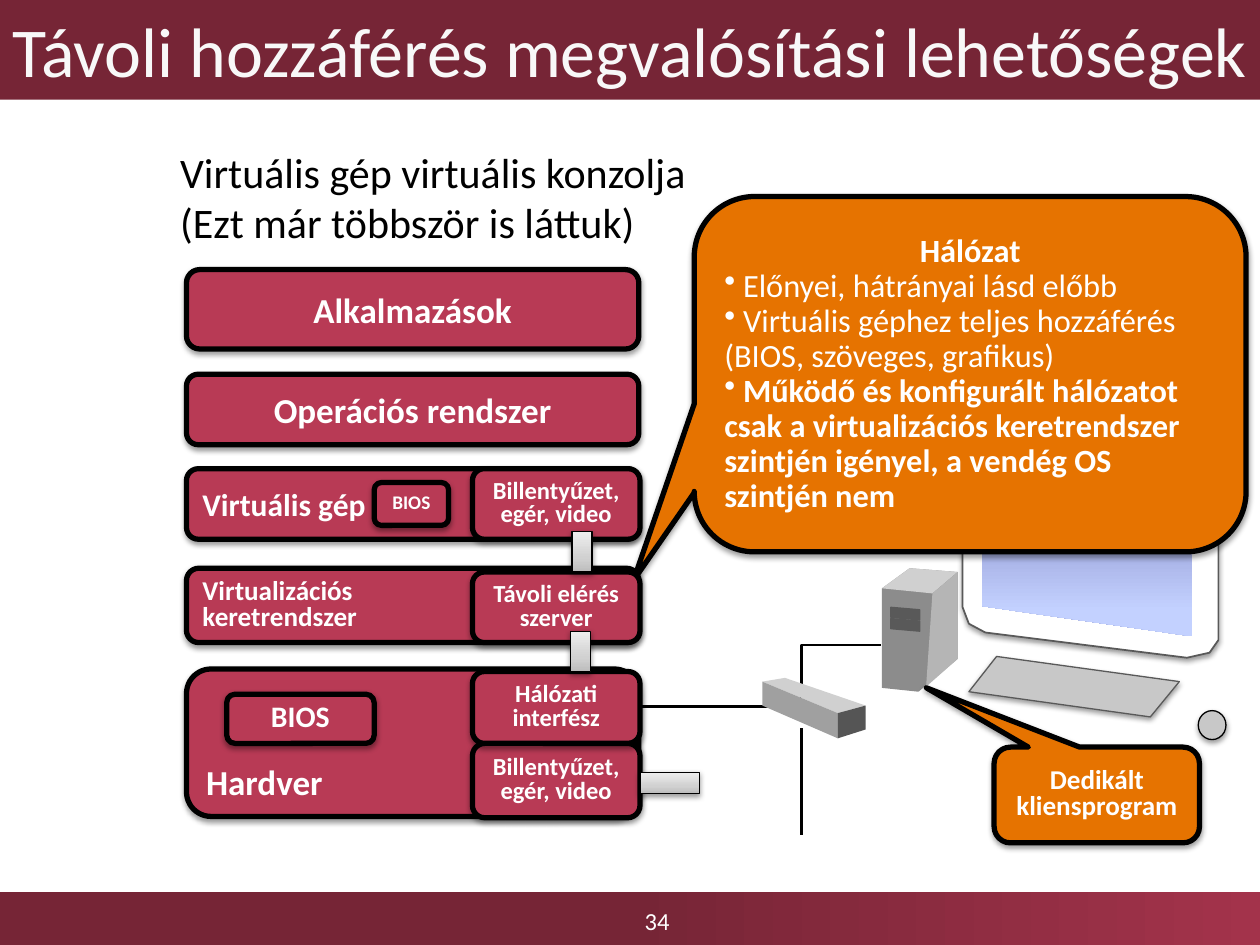
"""Build the slide on remote access to a virtual machine's console."""
from lxml import etree
from pptx import Presentation
from pptx import util as u
from pptx.dml import color
from pptx.enum import shapes, text
from pptx.oxml import ns

COLS, ROWS = 10, 7.5
FONT = "Calibri"
WINE, ROSE, ORANGE = "762536", "B83A55", "E67300"
SILVER = [(0, "BDBDBD"), (35, "D1D1D1"), (100, "EEEEEE")]
KIND = shapes.MSO_SHAPE
CENTER, LEFT = text.PP_ALIGN.CENTER, text.PP_ALIGN.LEFT
MIDDLE = text.MSO_ANCHOR.MIDDLE
LAYER_X, LAYER_W = 1.48, 3.59
PART_X, PART_W = 3.75, 1.33
CABLE_X = 6.36


def rgb(value):
    """Turn a hex string into a colour."""
    return color.RGBColor.from_string(value)


def cells(*values):
    """Turn grid columns or rows of one inch into lengths."""
    return [u.Inches(v) for v in values]


def apply(target, **formats):
    """Set each format value on the target."""
    for name, value in formats.items():
        setattr(target, name, value)


def child(parent, tag, **attrs):
    """Append a DrawingML element."""
    return etree.SubElement(parent, ns.qn(tag), {k: str(v) for k, v in attrs.items()})


def paint(sp, fill, angle=0):
    """Fill a shape with one colour or with clockwise gradient stops."""
    if isinstance(fill, str):
        sp.fill.solid()
        sp.fill.fore_color.rgb = rgb(fill)
        return
    sp.fill.gradient()
    sp.fill.gradient_angle = (360 - angle) % 360
    stops = next(sp._element.spPr.iter(ns.qn("a:gsLst")))
    for stop in list(stops):
        stops.remove(stop)
    for share, value in fill:
        child(child(stops, "a:gs", pos=share * 1000), "a:srgbClr", val=value)


def outline(sp, width, value="000000"):
    """Draw a border, or none when the width is zero."""
    if width:
        sp.line.color.rgb = rgb(value)
        sp.line.width = u.Pt(width)
    else:
        sp.line.fill.background()


def shade(sp, shadow):
    """Drop a soft shadow straight down, or none."""
    sp.shadow.inherit = False
    if shadow:
        effects = sp._element.spPr.find(ns.qn("a:effectLst"))
        outer = child(effects, "a:outerShdw", blurRad=u.Pt(3.1), dist=u.Pt(1.6),
                      dir=5400000, rotWithShape=0)
        child(child(outer, "a:srgbClr", val="000000"), "a:alpha", val=38000)


def block(s, box, fill, kind=KIND.ROUNDED_RECTANGLE, border=3, shadow=True, angle=0, adj=()):
    """Add a preset shape."""
    sp = s.shapes.add_shape(kind, *cells(*box))
    for i, value in enumerate(adj):
        sp.adjustments[i] = value
    paint(sp, fill, angle)
    outline(sp, border)
    shade(sp, shadow)
    return sp


def write(sp, lines, size, ink="FFFFFF", bold=True, align=CENTER, spacing=1.0,
          anchor=MIDDLE, wrap=True):
    """Write one paragraph per line, all in the same format."""
    tf = sp.text_frame
    apply(tf, word_wrap=wrap, vertical_anchor=anchor, auto_size=text.MSO_AUTO_SIZE.NONE)
    for i, line in enumerate(lines):
        p = tf.paragraphs[0] if i == 0 else tf.add_paragraph()
        p.text = line
        apply(p, alignment=align, line_spacing=spacing, space_before=u.Pt(0))
        for r in p.runs:
            apply(r.font, size=u.Pt(size), bold=bold, name=FONT)
            r.font.color.rgb = rgb(ink)
    return tf.paragraphs


def bullet(p, char=None):
    """Give a paragraph a flush bullet, or none."""
    props = p._p.get_or_add_pPr()
    for name in ("marL", "indent"):
        props.set(name, "0")
    if char:
        child(props, "a:buChar", char=char)
    else:
        child(props, "a:buNone")


def cable(s, start, end, kind=shapes.MSO_CONNECTOR.STRAIGHT, preset=None):
    """Add a black network cable."""
    c = s.shapes.add_connector(kind, *cells(*start, *end))
    outline(c, 1.5)
    child(c._element.spPr, "a:effectLst")
    if preset:
        c._element.spPr.find(ns.qn("a:prstGeom")).set("prst", preset)


def facet(s, points, fill, border=0, shadow=False, angle=0):
    """Add a polygon through grid points."""
    first, *rest = [cells(*point) for point in points]
    builder = s.shapes.build_freeform(*first)
    builder.add_line_segments(rest, close=True)
    sp = builder.convert_to_shape()
    paint(sp, fill, angle)
    outline(sp, border, "595959")
    shade(sp, shadow)


def computer(s):
    """Draw the client's tower, monitor, keyboard and mouse."""
    facet(s, [(7, 4.67), (7.22, 4.51), (7.6, 4.54), (7.6, 5.23), (7.29, 5.49), (7, 5.46)], "8C8C8C")
    facet(s, [(7, 4.67), (7.22, 4.51), (7.6, 4.54), (7.4, 4.71)], "D0D0D0")
    facet(s, [(7.4, 4.71), (7.6, 4.54), (7.6, 5.23), (7.35, 5.45)], "B5B5B5")
    for y in (4.82, 4.91):
        facet(s, [(7.07, y), (7.3, y + .02), (7.3, y + .1), (7.07, y + .08)], "595959", .75)
    facet(s, [(7.64, 3.7), (9.67, 3.7), (9.67, 5.08), (9.6, 5.18), (9.42, 5.22),
              (7.82, 5.02), (7.69, 4.95), (7.64, 4.82)], "FFFFFF", 1, True)
    facet(s, [(7.79, 3.83), (9.46, 3.83), (9.46, 5.05), (7.79, 4.81)],
          [(0, "8488C4"), (83, "C3D1FF"), (100, "C3D1FF")], angle=90)
    facet(s, [(7.91, 5.21), (9.36, 5.41), (9.13, 5.69), (7.69, 5.49)], "C8C8C8", .75, True)
    block(s, (9.51, 5.64, .22, .23), "C8C8C8", KIND.OVAL, .75)


def hub(s):
    """Draw the network switch."""
    facet(s, [(6.05, 5.41), (6.23, 5.38), (6.87, 5.6), (6.65, 5.66)], "D0D0D0")
    facet(s, [(6.05, 5.41), (6.65, 5.66), (6.65, 5.86), (6.05, 5.6)], "A0A0A0")
    facet(s, [(6.65, 5.66), (6.87, 5.6), (6.87, 5.79), (6.65, 5.86)], "555555")


def callouts(s):
    """Add the two orange callouts."""
    kind = KIND.ROUNDED_RECTANGULAR_CALLOUT
    net = block(s, (5.51, 1.56, 4.38, 2.82), ORANGE, kind, adj=(-.61, .58, .17))
    ps = write(net, ["Hálózat", " Előnyei, hátrányai lásd előbb",
                     " Virtuális géphez teljes hozzáférés (BIOS, szöveges, grafikus)",
                     " Működő és konfigurált hálózatot csak a virtualizációs keretrendszer "
                     "szintjén igényel, a vendég OS szintjén nem"], 18.5, spacing=.9)
    for p in ps[1:]:
        p.alignment = LEFT
        bullet(p, "•")
    for p in ps[1:3]:
        p.runs[0].font.bold = False
    client = block(s, (7.89, 5.93, 1.63, .76), ORANGE, kind, adj=(-.83, -1.12, .17))
    write(client, ["Dedikált kliensprogram"], 15.5, spacing=.8)


def stack(s):
    """Add the layers of the virtualised machine with their parts."""
    layers = [
        (5.31, 1.17, "Hardver", 20, {"align": LEFT, "anchor": text.MSO_ANCHOR.BOTTOM}),
        (2.97, .56, "Operációs rendszer", 20, {}),
        (2.14, .63, "Alkalmazások", 20, {}),
        (4.51, .59, "Virtualizációs\vkeretrendszer", 15.5, {"align": LEFT, "spacing": .8}),
        (3.72, .56, "Virtuális gép", 18, {"align": LEFT})]
    for y, h, label, size, formats in layers:
        write(block(s, (LAYER_X, y, LAYER_W, h), ROSE), [label], size, **formats)
    console = ["Billentyűzet,", "egér, video"]
    parts = [(5.9, .59, console), (5.33, .57, ["Hálózati interfész"]),
             (3.72, .56, console), (4.54, .56, ["Távoli elérés", "szerver"])]
    for y, h, lines in parts:
        write(block(s, (PART_X, y, PART_W, h), ROSE), lines, 14, spacing=.8)
    for box in ((4.54, 4.22, .16, .32), (4.53, 5.01, .16, .32), (5.08, 6.13, .47, .17)):
        block(s, box, SILVER, KIND.RECTANGLE, .75, angle=270)
    for box, size in (((2.97, 3.83, .59, .34), 11), ((1.8, 5.51, 1.17, .39), 17)):
        write(block(s, box, ROSE), ["BIOS"], size, spacing=.8)


def frame(s):
    """Add the title, the introduction and the footer."""
    title, body = s.placeholders
    for sp, box in ((title, (0, 0, COLS, .79)), (body, (1.33, 1.11, 7.42, 1))):
        apply(sp, **dict(zip(("left", "top", "width", "height"), cells(*box))))
    paint(title, WINE)
    write(title, ["Távoli hozzáférés megvalósítási lehetőségek"], 40, "F8F8F8", False, wrap=False)
    intro = ["Virtuális gép virtuális konzolja", "(Ezt már többször is láttuk)"]
    for p in write(body, intro, 24, "000000", False, LEFT, anchor=text.MSO_ANCHOR.TOP):
        bullet(p)
    block(s, (0, 7.08, COLS, .42), [(0, WINE), (50, WINE), (100, "A3334B")],
          KIND.RECTANGLE, 0, False)
    number = s.shapes.add_textbox(*cells(3.59, 7.11, 3.25, .39))
    write(number, ["34"], 14, bold=False)


def main():
    """Build and save the slide."""
    prs = Presentation()
    prs.slide_width, prs.slide_height = cells(COLS, ROWS)
    s = prs.slides.add_slide(prs.slide_layouts[1])
    frame(s)
    computer(s)
    elbow = shapes.MSO_CONNECTOR.ELBOW
    cable(s, (6.99, 5.12), (CABLE_X, 5.54), elbow, "bentConnector2")
    cable(s, (5.08, 5.61), (CABLE_X, 5.61), elbow)
    cable(s, (CABLE_X, 5.78), (CABLE_X, 6.63))
    hub(s)
    callouts(s)
    stack(s)
    prs.save("out.pptx")


if __name__ == "__main__":
    main()
